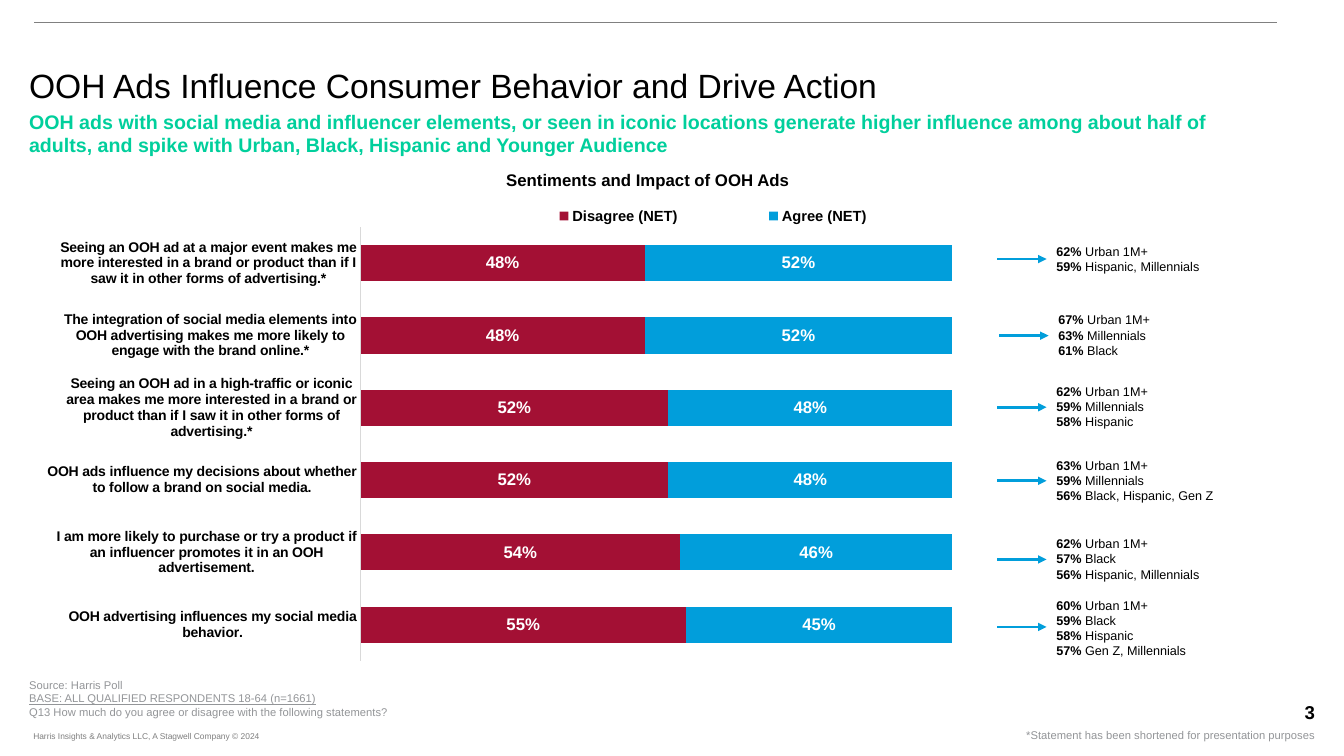
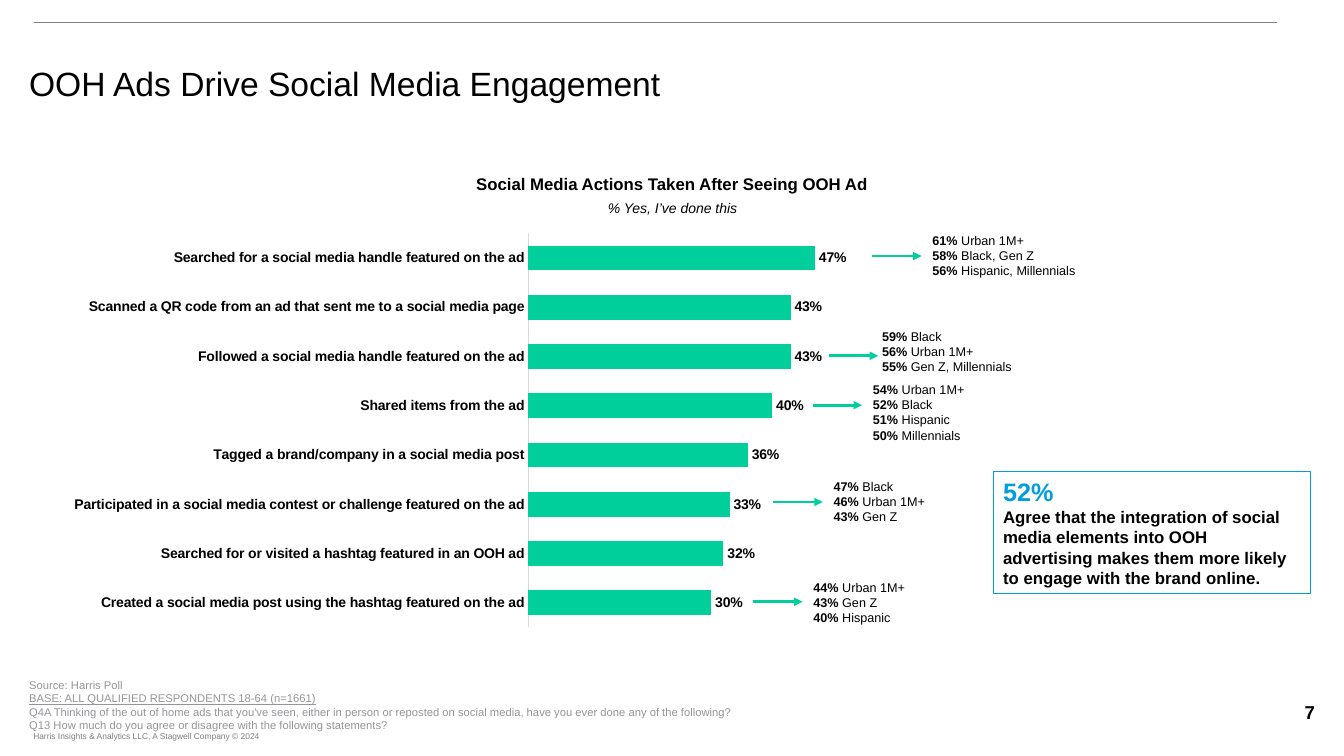
from lxml import etree
from pptx import Presentation
from pptx.chart.data import CategoryChartData
from pptx.dml.color import RGBColor
from pptx.enum.chart import (XL_CHART_TYPE, XL_LABEL_POSITION,
                             XL_LEGEND_POSITION, XL_TICK_MARK)
from pptx.enum.shapes import MSO_CONNECTOR, MSO_SHAPE
from pptx.enum.text import MSO_ANCHOR, PP_ALIGN
from pptx.oxml import parse_xml
from pptx.oxml.ns import nsdecls, qn
from pptx.util import Inches, Pt

LEFT, CENTER = PP_ALIGN.LEFT, PP_ALIGN.CENTER
TOP, MIDDLE = MSO_ANCHOR.TOP, MSO_ANCHOR.MIDDLE
STACKED, BARS = XL_CHART_TYPE.BAR_STACKED_100, XL_CHART_TYPE.BAR_CLUSTERED
INSIDE, OUTSIDE = XL_LABEL_POSITION.CENTER, XL_LABEL_POSITION.OUTSIDE_END
NO_TICK = XL_TICK_MARK.NONE
STRAIGHT, RECT = MSO_CONNECTOR.STRAIGHT, MSO_SHAPE.RECTANGLE

FONT = "Arial"
BLACK, WHITE, GREY, RULE = "000000", "FFFFFF", "939598", "808080"
PALE, GREEN, BLUE, RED = "D9D9D9", "00CF9C", "019EDB", "A31034"


def color(code):
    return RGBColor.from_string(code)


def style(font, size, code=BLACK, bold=False):
    font.name, font.size, font.bold = FONT, Pt(size), bold
    font.color.rgb = color(code)


# Text: each paragraph is a list of (words, size, colour, flags)
def fill_text(frame, paras, align=LEFT, anchor=TOP):
    frame.word_wrap = True
    frame.vertical_anchor = anchor
    for i, runs in enumerate(paras):
        para = frame.paragraphs[0] if i == 0 else frame.add_paragraph()
        para.alignment = align
        for words, size, code, flags in runs:
            run = para.add_run()
            run.text = words
            style(run.font, size, code, "b" in flags)
            run.font.italic = "i" in flags
            run.font.underline = "u" in flags


def add_text(slide, box, paras, align=LEFT, anchor=TOP):
    shape = slide.shapes.add_textbox(*map(Inches, box))
    fill_text(shape.text_frame, paras, align, anchor)
    return shape


def add_line(slide, start, end, code, width, arrow=False):
    line = slide.shapes.add_connector(STRAIGHT, *map(Inches, start + end))
    line.line.color.rgb = color(code)
    line.line.width = Pt(width)
    if arrow:
        tip = etree.SubElement(line.line._get_or_add_ln(), qn("a:tailEnd"))
        tip.set("type", "triangle")
    etree.SubElement(line._element.spPr, qn("a:effectLst"))


# Frame shared by the slides: rule, title, source notes, footer, number
def add_frame(deck, title, top, number, notes):
    slide = deck.slides.add_slide(deck.slide_layouts[6])
    add_line(slide, (0.34, 0.22), (12.67, 0.22), RULE, 0.5)
    add_text(slide, (0.19, top, 12.47, 0.47), [[(title, 24, BLACK, "")]],
             anchor=MIDDLE)
    lines = [("Source: Harris Poll", ""),
             ("BASE: ALL QUALIFIED RESPONDENTS 18-64 (n=1661)", "u")]
    lines += [(note, "") for note in notes]
    add_text(slide, (0.19, 6.68, 10.12, 0.1 + 0.13 * len(lines)),
             [[(words, 8, GREY, flag)] for words, flag in lines])
    foot = add_text(slide, (0.33, 7.2, 2.39, 0.2), [[(
        "Harris Insights & Analytics LLC, A Stagwell Company © 2024",
        6, "7F7F7F", "")]])
    foot.text_frame.margin_left = 0
    add_text(slide, (12.66, 6.9, 0.66, 0.33),
             [[(str(number), 13.3, BLACK, "b")]], CENTER)
    return slide


# Arrow with the groups that score highest, as "share group" lines
def add_note(slide, arrow, text, groups, code):
    x, y = arrow
    add_line(slide, (x, y), (x + 0.49, y), code, 2, True)
    paras = []
    for group in groups:
        share, name = group.split(" ", 1)
        paras.append([(share + " ", 9, BLACK, "b"), (name, 9, BLACK, "")])
    add_text(slide, (*text, 2.8, 0.1 + 0.15 * len(groups)), paras)


def add_layout(parent, place, inner=False):
    for old in parent.findall(qn("c:layout")):
        parent.remove(old)
    parts = '<c:layoutTarget val="inner"/>' if inner else ""
    parts += '<c:xMode val="edge"/><c:yMode val="edge"/>'
    parts += "".join(f'<c:{k} val="{v}"/>' for k, v in zip("xywh", place))
    return parse_xml(f'<c:layout {nsdecls("c")}><c:manualLayout>{parts}'
                     '</c:manualLayout></c:layout>')


# Bar chart; each series is (name, values, colour)
def add_bars(slide, box, kind, names, series, top, place, label):
    data = CategoryChartData(number_format="0%")
    data.categories = names
    for name, values, _ in series:
        data.add_series(name, values)
    chart = slide.shapes.add_chart(kind, *map(Inches, box), data).chart
    chart.has_title = chart.has_legend = False
    style(chart.font, 12, BLACK, True)

    axis = chart.category_axis
    axis.reverse_order = True
    axis.major_tick_mark = axis.minor_tick_mark = NO_TICK
    axis.has_major_gridlines = False
    axis.format.line.color.rgb = color(PALE)
    axis.format.line.width = Pt(0.75)
    style(axis.tick_labels.font, 10, BLACK, True)
    scale = chart.value_axis
    scale.minimum_scale, scale.maximum_scale = 0, top
    scale.has_major_gridlines = scale.visible = False

    plot = chart.plots[0]
    plot.gap_width, plot.vary_by_categories = 100, False
    if kind == STACKED:
        plot.overlap = 100
    size, code, spot = label
    for bars, (_, _, paint) in zip(plot.series, series):
        bars.format.fill.solid()
        bars.format.fill.fore_color.rgb = color(paint)
        bars.invert_if_negative = False
        labels = bars.data_labels
        labels.show_value, labels.position = True, spot
        labels.number_format, labels.number_format_is_linked = "0%", False
        style(labels.font, size, code, True)
    area = chart._chartSpace.chart.plotArea
    area.insert(0, add_layout(area, place, True))
    return chart


def add_legend(chart, place):
    chart.has_legend = True
    legend = chart.legend
    legend.position = XL_LEGEND_POSITION.TOP
    legend.include_in_layout = False
    style(legend.font, 10.5, BLACK, True)
    node = legend._element
    layout = add_layout(node, place)
    node.find(qn("c:legendPos")).addnext(layout)


Q13 = "Q13 How much do you agree or disagree with the following statements?"


def build_views(deck):
    slide = add_frame(
        deck, "OOH Ads Influence Consumer Behavior and Drive Action",
        0.61, 3, [Q13])
    add_text(slide, (0.19, 1.04, 12.03, 0.41), [[(
        "OOH ads with social media and influencer elements, or seen in iconic "
        "locations generate higher influence among about half of adults, and "
        "spike with Urban, Black, Hispanic and Younger Audience",
        14, GREEN, "b")]])
    add_text(slide, (4.3, 1.63, 4.25, 0.3),
             [[("Sentiments and Impact of OOH Ads", 12, BLACK, "b")]], CENTER)
    names = [
        "Seeing an OOH ad at a major event makes me more interested in a "
        "brand or product than if I saw it in other forms of advertising.*",
        "The integration of social media elements into OOH advertising makes "
        "me more likely to engage with the brand online.*",
        "Seeing an OOH ad in a high-traffic or iconic area makes me more "
        "interested in a brand or product than if I saw it in other forms of "
        "advertising.*",
        "OOH ads influence my decisions about whether to follow a brand on "
        "social media.",
        "I am more likely to purchase or try a product if an influencer "
        "promotes it in an OOH advertisement.",
        "OOH advertising influences my social media behavior."]
    series = [
        ("Disagree (NET)", (0.48, 0.48, 0.52, 0.52, 0.54, 0.55), RED),
        ("Agree (NET)", (0.52, 0.52, 0.48, 0.48, 0.46, 0.45), BLUE)]
    chart = add_bars(slide, (0.47, 1.93, 10.36, 4.75), STACKED, names, series,
                     1.1, (0.299, 0.068, 0.624, 0.906), (12, WHITE, INSIDE))
    add_legend(chart, (0.407, 0.01, 0.46, 0.07))

    # Groups beside each bar: arrow left, arrow height, text top
    urban = "Urban 1M+"
    rows = [
        (9.89, 2.57, 2.37, [f"62% {urban}", "59% Hispanic, Millennials"]),
        (9.91, 3.33, 3.05, [f"67% {urban}", "63% Millennials", "61% Black"]),
        (9.89, 4.04, 3.76, [f"62% {urban}", "59% Millennials",
                            "58% Hispanic"]),
        (9.89, 4.77, 4.49, [f"63% {urban}", "59% Millennials",
                            "56% Black, Hispanic, Gen Z"]),
        (9.89, 5.55, 5.27, [f"62% {urban}", "57% Black",
                            "56% Hispanic, Millennials"]),
        (9.89, 6.22, 5.88, [f"60% {urban}", "59% Black", "58% Hispanic",
                            "57% Gen Z, Millennials"])]
    for x, y, top, groups in rows:
        add_note(slide, (x, y), (x + 0.49, top), groups, BLUE)
    add_text(slide, (10.08, 7.18, 3.2, 0.24), [[(
        "*Statement has been shortened for presentation purposes",
        8, GREY, "")]])


# Outlined box with one key figure
def add_fact(slide, box, share, words):
    shape = slide.shapes.add_shape(RECT, *map(Inches, box))
    shape.shadow.inherit = False
    shape.fill.background()
    shape.line.color.rgb = color(BLUE)
    shape.line.width = Pt(0.75)
    fill_text(shape.text_frame,
              [[(share, 18, BLUE, "b")], [(words, 12, BLACK, "b")]])


def build_acts(deck):
    slide = add_frame(
        deck, "OOH Ads Drive Social Media Engagement", 0.59, 7,
        ["Q4A Thinking of the out of home ads that you've seen, either in "
         "person or reposted on social media, have you ever done any of the "
         "following?", Q13])
    names = [
        "Searched for a social media handle featured on the ad",
        "Scanned a QR code from an ad that sent me to a social media page",
        "Followed a social media handle featured on the ad",
        "Shared items from the ad",
        "Tagged a brand/company in a social media post",
        "Participated in a social media contest or challenge featured on "
        "the ad",
        "Searched for or visited a hashtag featured in an OOH ad",
        "Created a social media post using the hashtag featured on the ad"]
    values = (0.47, 0.43, 0.43, 0.4, 0.36, 0.33, 0.32, 0.3)
    add_bars(slide, (0, 2.31, 11.91, 3.92), BARS, names,
             [("Series 1", values, GREEN)], 1, (0.44, 0, 0.508, 1),
             (10, BLACK, OUTSIDE))
    add_text(slide, (4.54, 1.67, 4.25, 0.3), [[(
        "Social Media Actions Taken After Seeing OOH Ad", 12, BLACK, "b")]],
        CENTER)
    add_text(slide, (4.19, 1.93, 4.96, 0.27),
             [[("% Yes, I’ve done this", 10, BLACK, "i")]], CENTER)

    # Groups beside some bars: arrow, text corner, lines
    rows = [
        ((8.65, 2.54), (9.15, 2.26), ["61% Urban 1M+", "58% Black, Gen Z",
                                      "56% Hispanic, Millennials"]),
        ((8.22, 3.53), (8.65, 3.21), ["59% Black", "56% Urban 1M+",
                                      "55% Gen Z, Millennials"]),
        ((8.06, 4.02), (8.56, 3.74), ["54% Urban 1M+", "52% Black",
                                      "51% Hispanic", "50% Millennials"]),
        ((7.67, 4.98), (8.17, 4.7), ["47% Black", "46% Urban 1M+",
                                     "43% Gen Z"]),
        ((7.47, 5.97), (7.97, 5.7), ["44% Urban 1M+", "43% Gen Z",
                                     "40% Hispanic"])]
    for arrow, text, groups in rows:
        add_note(slide, arrow, text, groups, GREEN)
    add_fact(slide, (9.85, 4.68, 3.15, 1.21), "52%",
             "Agree that the integration of social media elements into OOH "
             "advertising makes them more likely to engage with the brand "
             "online.")


def main():
    deck = Presentation()
    deck.slide_width, deck.slide_height = Inches(13.33), Inches(7.5)
    build_views(deck)
    build_acts(deck)
    deck.save("out.pptx")


if __name__ == "__main__":
    main()
